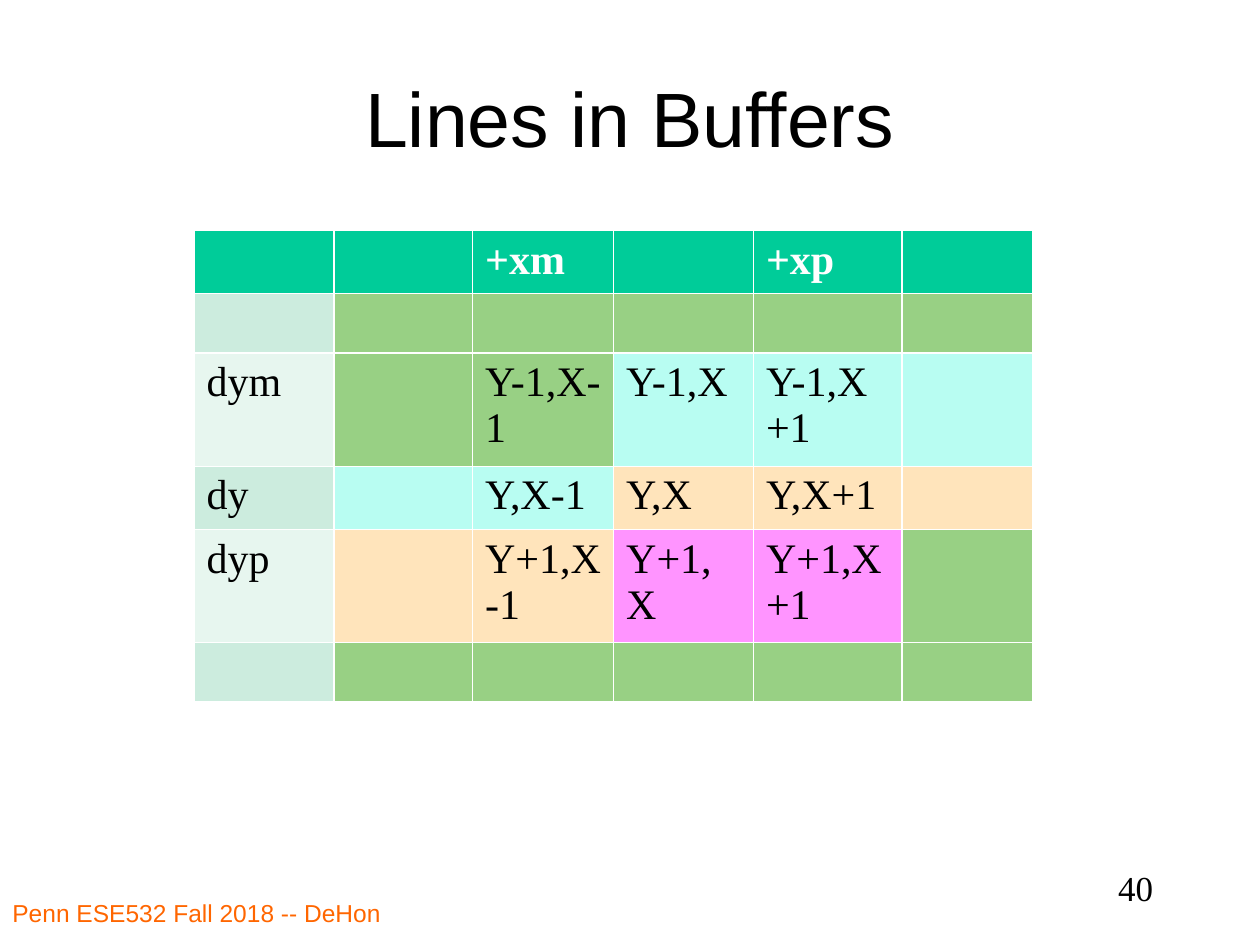
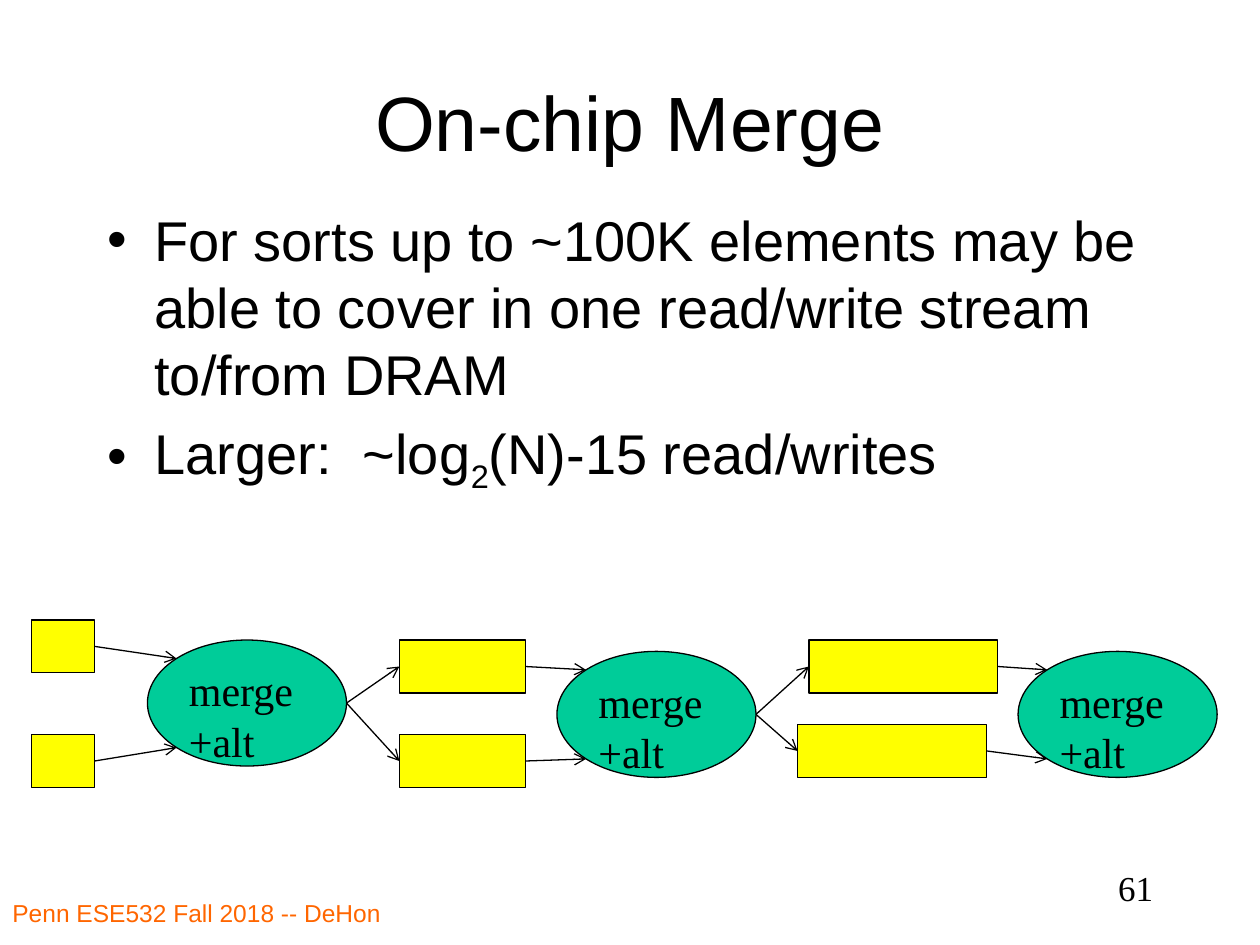
from math import cos, pi

from lxml.etree import SubElement
from pptx import Presentation
from pptx.dml.color import RGBColor
from pptx.enum.shapes import MSO_CONNECTOR, MSO_SHAPE
from pptx.enum.text import MSO_ANCHOR, MSO_AUTO_SIZE, PP_ALIGN
from pptx.oxml.ns import qn
from pptx.util import Inches, Pt

# Shared look
COLOURS = {
    "black": "000000", "white": "FFFFFF", "footer": "FF6600",
    "teal": "00CC99", "buffer": "FFFF00",
    "band_dark": "CCECDE", "band_light": "E7F6EF",
    "green": "98D084", "aqua": "B8FDF2", "peach": "FFE4BB", "pink": "FF94FF",
}
SANS, SERIF = "Arial", "Times New Roman"
FOOTER = "Penn ESE532 Fall 2018 -- DeHon"
TITLE_ONLY, TITLE_AND_BODY = 5, 1

# Slide 1: table text, with a fill key per cell
TABLE_ROWS = [
    ["", "", "+xm", "", "+xp", ""],
    ["", "", "", "", "", ""],
    ["dym", "", "Y-1,X-1", "Y-1,X", "Y-1,X+1", ""],
    ["dy", "", "Y,X-1", "Y,X", "Y,X+1", ""],
    ["dyp", "", "Y+1,X-1", "Y+1,X", "Y+1,X+1", ""],
    ["", "", "", "", "", ""],
]
FILL_KEYS = {"T": "teal", "D": "band_dark", "L": "band_light",
             "G": "green", "A": "aqua", "P": "peach", "K": "pink"}
TABLE_FILLS = ["TTTTTT", "DGGGGG", "LGGAAA", "DAAPPP", "LPPKKG", "DGGGGG"]
COLUMN_WIDTHS = [1.11, 1.1, 1.12, 1.11, 1.18, 1.04]
ROW_HEIGHT = 0.47

# Slide 2: bullets as (text, is_subscript) runs, and the merge stages
BULLETS = [
    [("For sorts up to ~100K elements may be able to cover in one "
      "read/write stream to/from DRAM", False)],
    [("Larger:  ~log", False), ("2", True), ("(N)-15 read/writes", False)],
]
MERGE_TEXT = "merge+alt"
MERGE_WIDTH, MERGE_HEIGHT = 1.58, 1
BUFFER_UNIT, BUFFER_HEIGHT = 0.5, 0.42
STAGES = [  # buffer corners feeding the merge, then the merge corner
    {"buffers": [(0.25, 4.92), (0.25, 5.83)], "merge": (1.17, 5.08)},
    {"buffers": [(3.17, 5.08), (3.17, 5.83)], "merge": (4.42, 5.17)},
    {"buffers": [(6.42, 5.08), (6.33, 5.75)], "merge": (8.08, 5.17)},
]


def rgb(name):
    return RGBColor.from_string(COLOURS[name])


def style(paragraph, size, name=SANS, colour="black", bold=None):
    font = paragraph.font
    font.size, font.name, font.bold = Pt(size), name, bold
    font.color.rgb = rgb(colour)


def place(shape, left, top, width, height):
    shape.left, shape.top = Inches(left), Inches(top)
    shape.width, shape.height = Inches(width), Inches(height)


def add_label(slide, text, box, size, name, colour, align):
    frame = slide.shapes.add_textbox(*map(Inches, box)).text_frame
    frame.word_wrap = True
    paragraph = frame.paragraphs[0]
    paragraph.text, paragraph.alignment = text, align
    style(paragraph, size, name, colour)


def add_slide(presentation, layout, title, title_top, number):
    """Start a slide with its title, footer and number."""
    slide = presentation.slides.add_slide(presentation.slide_layouts[layout])
    heading = slide.shapes.title
    place(heading, 0.75, title_top, 8.5, 1.25)
    heading.text_frame.text = title
    heading.text_frame.vertical_anchor = MSO_ANCHOR.MIDDLE
    paragraph = heading.text_frame.paragraphs[0]
    paragraph.alignment = PP_ALIGN.CENTER
    style(paragraph, 44)
    add_label(slide, FOOTER, (0, 7.08, 4.58, 0.42), 14, SANS, "footer", PP_ALIGN.LEFT)
    add_label(slide, number, (7.17, 6.83, 2.08, 0.5), 20, SERIF, "black", PP_ALIGN.RIGHT)
    return slide


def add_buffer_table(slide):
    # The default table style supplies the white rules between cells
    table = slide.shapes.add_table(
        len(TABLE_ROWS), len(COLUMN_WIDTHS), Inches(1.54), Inches(1.83),
        Inches(sum(COLUMN_WIDTHS)), Inches(ROW_HEIGHT * len(TABLE_ROWS))).table
    for column, width in zip(table.columns, COLUMN_WIDTHS):
        column.width = Inches(width)
    for r, (texts, fills) in enumerate(zip(TABLE_ROWS, TABLE_FILLS)):
        for c, (text, key) in enumerate(zip(texts, fills)):
            cell = table.cell(r, c)
            cell.fill.solid()
            cell.fill.fore_color.rgb = rgb(FILL_KEYS[key])
            if text:
                cell.text = text
                style(cell.text_frame.paragraphs[0], 24, SERIF,
                      "black" if r else "white", r == 0)


def add_bullets(slide):
    body = slide.placeholders[1]
    place(body, 0.75, 1.58, 8.5, 2.42)
    frame = body.text_frame
    frame.auto_size = MSO_AUTO_SIZE.NONE
    for index, runs in enumerate(BULLETS):
        paragraph = frame.add_paragraph() if index else frame.paragraphs[0]
        style(paragraph, 32)
        for text, is_subscript in runs:
            run = paragraph.add_run()
            run.text = text
            if is_subscript:
                run._r.get_or_add_rPr().set("baseline", "-25000")


def add_outlined(slide, kind, corner, width, height, fill):
    shape = slide.shapes.add_shape(
        kind, *map(Inches, (*corner, width, height)))
    shape.shadow.inherit = False
    shape.fill.solid()
    shape.fill.fore_color.rgb = rgb(fill)
    shape.line.color.rgb = rgb("black")
    shape.line.width = Pt(0.75)
    return shape


def add_merge(slide, corner):
    merge = add_outlined(slide, MSO_SHAPE.OVAL, corner, MERGE_WIDTH, MERGE_HEIGHT, "teal")
    frame = merge.text_frame
    frame.word_wrap = True
    frame.vertical_anchor = MSO_ANCHOR.TOP
    paragraph = frame.paragraphs[0]
    paragraph.text, paragraph.alignment = MERGE_TEXT, PP_ALIGN.LEFT
    style(paragraph, 24, SERIF)


def add_arrow(slide, start, end):
    arrow = slide.shapes.add_connector(
        MSO_CONNECTOR.STRAIGHT, *map(Inches, (*start, *end)))
    arrow.line.color.rgb = rgb("black")
    arrow.line.width = Pt(0.75)
    SubElement(arrow.line._get_or_add_ln(), qn("a:tailEnd"), type="arrow")
    SubElement(arrow._element.spPr, qn("a:effectLst"))
    return arrow


def add_merge_pipeline(slide):
    inset = (1 - cos(pi / 4)) / 2  # where an ellipse's diagonal meets its outline
    output = None
    for number, stage in enumerate(STAGES, start=1):
        left, top = stage["merge"]
        add_merge(slide, stage["merge"])
        width = BUFFER_UNIT * number
        for corner, share in zip(stage["buffers"], (inset, 1 - inset)):
            buffer = add_outlined(slide, MSO_SHAPE.RECTANGLE, corner,
                                  width, BUFFER_HEIGHT, "buffer")
            middle = corner[1] + BUFFER_HEIGHT / 2
            entry = (left + MERGE_WIDTH * inset, top + MERGE_HEIGHT * share)
            outgoing = add_arrow(slide, (corner[0] + width, middle), entry)
            outgoing.begin_connect(buffer, 3)
            if output:
                incoming = add_arrow(slide, output, (corner[0], middle))
                incoming.end_connect(buffer, 1)
        output = (left + MERGE_WIDTH, top + MERGE_HEIGHT / 2)


def main():
    presentation = Presentation()
    presentation.slide_width, presentation.slide_height = Inches(10), Inches(7.5)

    lines = add_slide(presentation, TITLE_ONLY, "Lines in Buffers", 0.3, "40")
    add_buffer_table(lines)

    merge = add_slide(presentation, TITLE_AND_BODY, "On-chip Merge", 0.33, "61")
    add_bullets(merge)
    add_merge_pipeline(merge)

    presentation.save("out.pptx")


if __name__ == "__main__":
    main()
